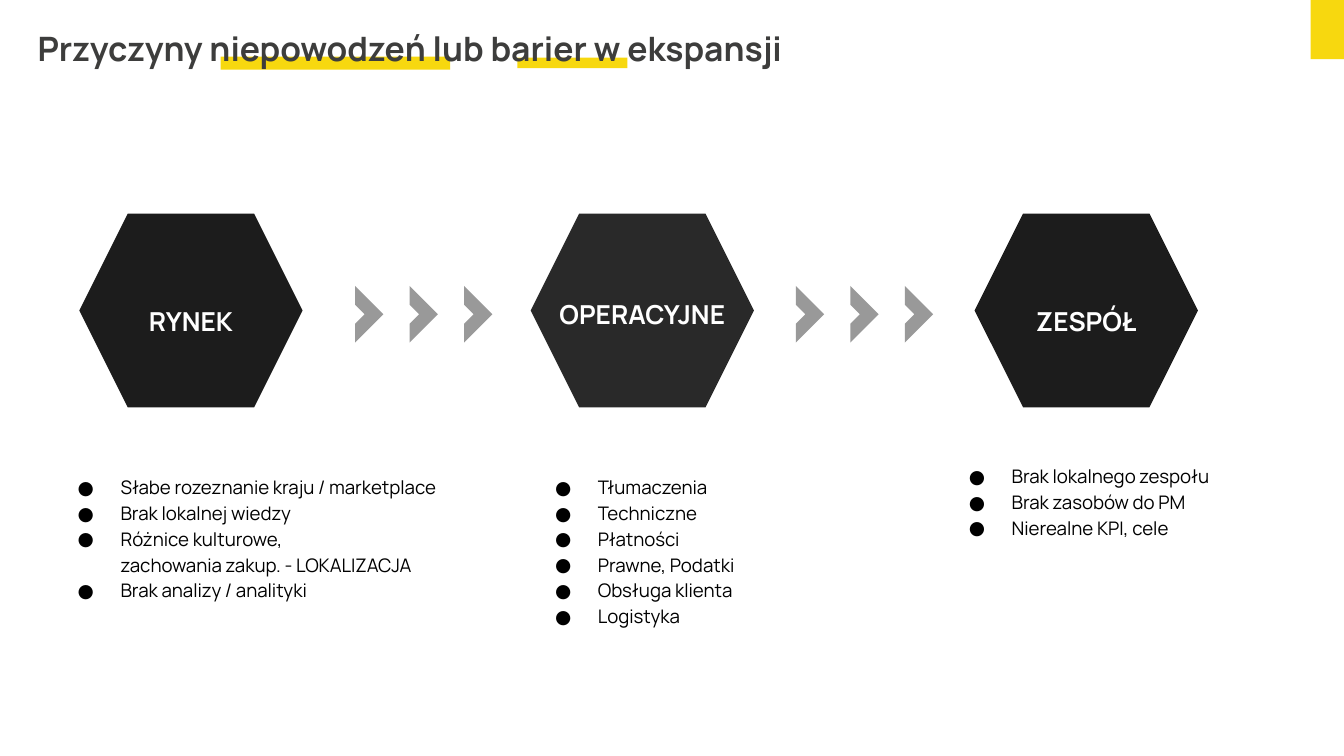
"""Build the slide on the causes of failed expansion."""
import pptx
import pptx.dml.color
import pptx.enum.shapes
import pptx.enum.text
import pptx.oxml
import pptx.oxml.ns
import pptx.util

Cm = pptx.util.Cm
Pt = pptx.util.Pt
RGBColor = pptx.dml.color.RGBColor
KIND = pptx.enum.shapes.MSO_SHAPE
ALIGN = pptx.enum.text.PP_ALIGN

GOLD = RGBColor(0xF7, 0xD8, 0x0F)
BLACK = RGBColor(0, 0, 0)
WHITE = RGBColor(0xFF, 0xFF, 0xFF)
COAL = RGBColor(0x1C, 0x1C, 0x1C)
DARK = RGBColor(0x29, 0x29, 0x29)
INK = RGBColor(0x3D, 0x3D, 0x3C)
GREY = RGBColor(0x99, 0x99, 0x99)

HEAD = {"size": Pt(18), "bold": True, "color": INK}
LABEL = {"size": Pt(14), "bold": True, "color": WHITE}
ITEM = {"size": Pt(10), "bold": False, "color": BLACK}

BARS = [(24.77, 0, 0.63, 1.12), (9.78, 1.09, 2.08, 0.2), (4.17, 1.07, 4.34, 0.25)]
STAGES = [
    ("RYNEK", 1.5, 5.44, COAL, (0.76, 8.69, 8.76, 2.9), [
        "Słabe rozeznanie kraju / marketplace",
        "Brak lokalnej wiedzy",
        "Różnice kulturowe,\vzachowania zakup. - LOKALIZACJA",
        "Brak analizy / analityki"]),
    ("OPERACYJNE", 10.03, 5.31, DARK, (9.78, 8.69, 7.57, 3.89), [
        "Tłumaczenia", "Techniczne", "Płatności",
        "Prawne, Podatki", "Obsługa klienta", "Logistyka"]),
    ("ZESPÓŁ", 18.42, 5.44, COAL, (17.6, 8.48, 7.8, 1.93), [
        "Brak lokalnego zespołu", "Brak zasobów do PM", "Nierealne KPI, cele"]),
]


def apply(thing, style):
    for name, value in style.items():
        if name == "color":
            thing.color.rgb = value
        else:
            setattr(thing, name, value)


def add_block(slide, kind, box, color, turn=0, adjust=()):
    block = slide.shapes.add_shape(kind, *map(Cm, box))
    block.shadow.inherit = False
    block.fill.solid()
    block.fill.fore_color.rgb = color
    block.line.fill.background()
    block.rotation = turn
    for spot, value in enumerate(adjust):
        block.adjustments[spot] = value


def add_bullet(para):
    props = para._p.get_or_add_pPr()
    props.set("marL", str(Cm(1.27)))
    props.set("indent", str(Cm(-0.81)))
    space = pptx.oxml.ns.nsdecls("a")
    for part in (
        f'<a:buClr {space}><a:srgbClr val="{BLACK}"/></a:buClr>',
        f'<a:buFont {space} typeface="Manrope"/>',
        f'<a:buChar {space} char="●"/>',
    ):
        props.append(pptx.oxml.parse_xml(part))


def add_text(slide, box, lines, style, layout, bullet=False):
    frame = slide.shapes.add_textbox(*map(Cm, box)).text_frame
    inset = Cm(0.25)
    apply(frame, {"word_wrap": True, "margin_left": inset, "margin_right": inset,
                  "margin_top": inset, "margin_bottom": inset})
    for spot, line in enumerate(lines):
        para = frame.add_paragraph() if spot else frame.paragraphs[0]
        para.text = line
        if bullet:
            add_bullet(para)
        apply(para, layout)
        for run in para.runs:
            apply(run.font, {"name": "Manrope", **style})


def add_stage(slide, name, left, top, color, box, items):
    add_block(slide, KIND.HEXAGON, (left, 4.04, 4.22, 3.66), color, adjust=(0.25,))
    add_text(slide, (left, top, 4.22, 1.12), [name], LABEL,
             {"alignment": ALIGN.CENTER, "line_spacing": 1.15})
    add_text(slide, box, items, ITEM, {"line_spacing": 1.15}, bullet=True)


def add_arrows(slide, left):
    for step in range(3):
        add_block(slide, KIND.HALF_FRAME, (left + step * 1.03, 5.56, 0.76, 0.76),
                  GREY, 135, (0.333, 0.333))


def main():
    deck = pptx.Presentation()
    deck.slide_width, deck.slide_height = Cm(25.4), Cm(14.29)
    slide = deck.slides.add_slide(deck.slide_layouts[6])
    for bar in BARS:
        add_block(slide, KIND.RECTANGLE, bar, GOLD)
    add_text(slide, (0.46, 0.28, 17.83, 1.12),
             ["Przyczyny niepowodzeń lub barier w ekspansji"], HEAD, {})
    for stage in STAGES:
        add_stage(slide, *stage)
    for left in (6.33, 14.66):
        add_arrows(slide, left)
    deck.save("out.pptx")


if __name__ == "__main__":
    main()
